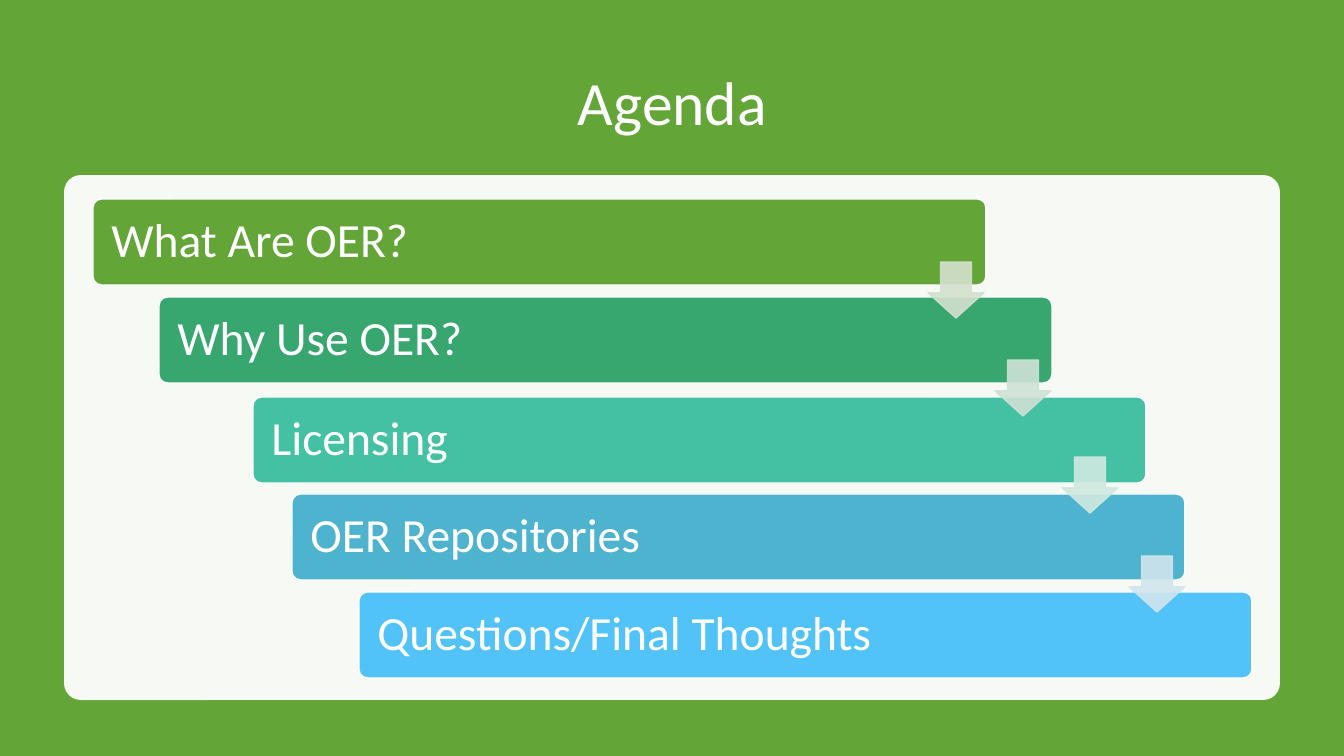
from pptx import Presentation
from pptx.dml.color import RGBColor
from pptx.enum.shapes import MSO_SHAPE
from pptx.enum.text import MSO_ANCHOR, PP_ALIGN
from pptx.oxml.ns import qn
from pptx.util import Emu, Pt
from lxml.etree import SubElement

FONT = "Calibri"
WHITE = "FFFFFF"
GREEN = "63A537"

# Agenda items: text, left, top, fill
ITEMS = [
    ("What Are OER?", 93, 199, GREEN),
    ("Why Use OER?", 159, 297, "37A76F"),
    ("Licensing", 253, 397, "44C1A3"),
    ("OER Repositories", 292, 494, "4EB3CF"),
    ("Questions/Final Thoughts", 359, 592, "51C3F9"),
]
BAR_W, BAR_H = 893, 86

# Arrows: top, colour; each one stands a fixed step further right
ARROWS = [(262, "D3E1CE"), (360, "CEE1D5"), (457, "CFE9E0"), (556, "D0E5ED")]
ARROW_LEFT, ARROW_STEP, ARROW_SIZE = 928, 67, 56


def px(n):
    return Emu(round(n * 914400 / 100.8))


def paint(fill, color, alpha=None):
    fill.solid()
    fill.fore_color.rgb = RGBColor.from_string(color)
    return alpha


def set_alpha(s, percent):
    for clr in s._element.spPr.iter(qn("a:srgbClr")):
        SubElement(clr, qn("a:alpha")).set("val", str(percent * 1000))


def add_block(slide, kind, box, color, adjustments, line=None):
    s = slide.shapes.add_shape(kind, *map(px, box))
    s.shadow.inherit = False
    for i, value in enumerate(adjustments):
        s.adjustments[i] = value
    paint(s.fill, color)
    if line:
        paint(s.line.fill, line)
        s.line.width = Pt(1)
    else:
        s.line.fill.background()
    return s


def write(s, text, size, align):
    tf = s.text_frame
    tf.word_wrap = True
    tf.vertical_anchor = MSO_ANCHOR.MIDDLE
    p = tf.paragraphs[0]
    p.text = text
    p.alignment = align
    p.line_spacing = 0.9
    p.font.name = FONT
    p.font.size = Pt(size)
    p.font.color.rgb = RGBColor.from_string(WHITE)
    return tf


def add_title(slide, text):
    s = slide.shapes.title
    s.left, s.top, s.width, s.height = map(px, (93, 50, 1159, 111))
    write(s, text, 44, PP_ALIGN.CENTER)


def add_bar(slide, text, left, top, color):
    s = add_block(slide, MSO_SHAPE.ROUNDED_RECTANGLE,
                  (left, top, BAR_W, BAR_H), color, [0.1], WHITE)
    tf = write(s, text, 34, PP_ALIGN.LEFT)
    tf.margin_left = tf.margin_right = px(16)


def add_arrow(slide, left, top, color):
    # Preset order: head length, then shaft width
    s = add_block(slide, MSO_SHAPE.DOWN_ARROW,
                  (left, top, ARROW_SIZE, ARROW_SIZE), color, [0.55, 0.45], color)
    set_alpha(s, 90)


def main():
    prs = Presentation()
    prs.slide_width, prs.slide_height = px(1344), px(756)
    slide = prs.slides.add_slide(prs.slide_layouts[5])

    # Background, title and panel
    paint(slide.background.fill, GREEN)
    add_title(slide, "Agenda")
    panel = add_block(slide, MSO_SHAPE.ROUNDED_RECTANGLE,
                      (64, 175, 1216, 525), WHITE, [0.032])
    set_alpha(panel, 95)

    # Staircase of bars, with the arrows in front
    for item in ITEMS:
        add_bar(slide, *item)
    for i, (top, color) in enumerate(ARROWS):
        add_arrow(slide, ARROW_LEFT + i * ARROW_STEP, top, color)

    prs.save("out.pptx")


if __name__ == "__main__":
    main()
